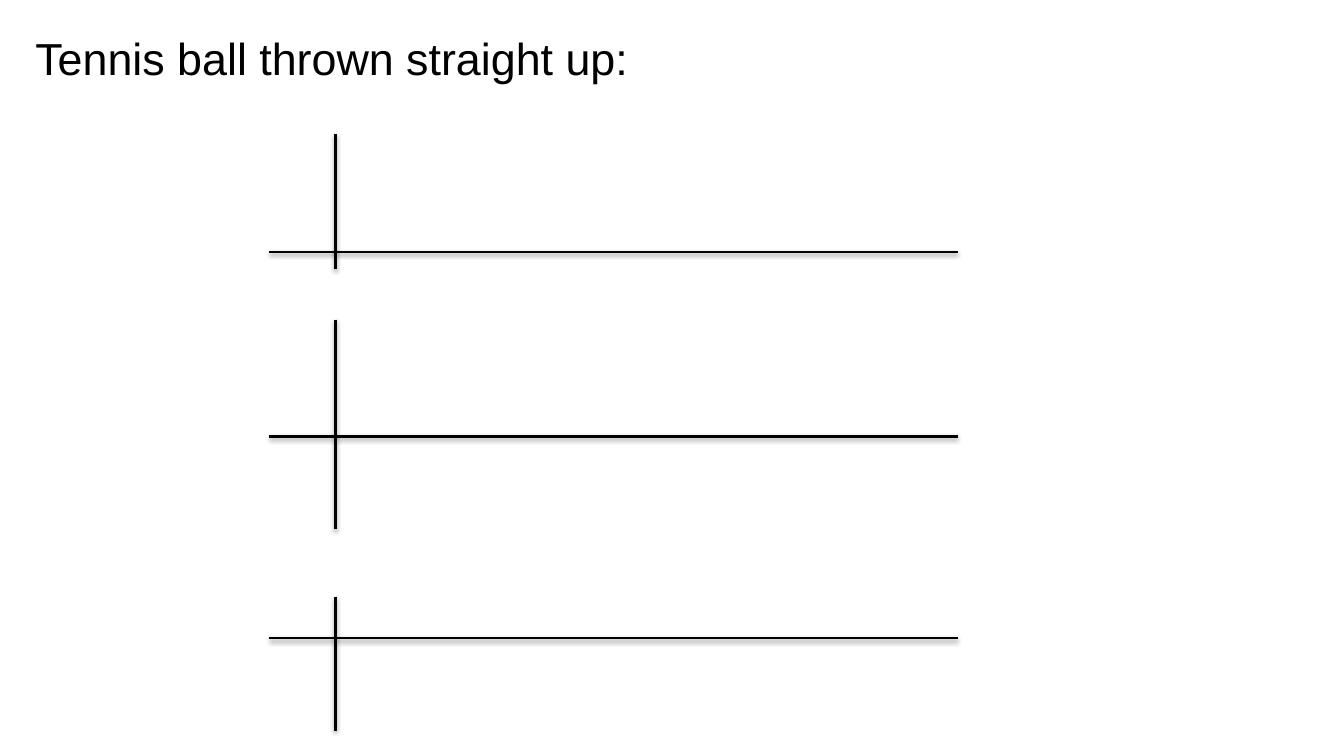
from dataclasses import dataclass

from lxml.etree import SubElement
from pptx import Presentation
from pptx.dml.color import RGBColor
from pptx.enum.shapes import MSO_CONNECTOR as Connector
from pptx.enum.text import MSO_ANCHOR as Anchor, MSO_AUTO_SIZE as AutoSize, PP_ALIGN as Align
from pptx.oxml.ns import qn
from pptx.util import Inches, Pt


@dataclass(frozen=True)
class Theme:
    ink: RGBColor = RGBColor(0, 0, 0)
    paper: RGBColor = RGBColor(255, 255, 255)
    font: str = "Arial"
    title_size: int = 32
    axis_width: int = 2
    shadow_alpha: int = 38  # percent
    shadow_blur: float = 3.15
    shadow_distance: float = 1.57


THEME = Theme()
TITLE_BOX = (0.25, 0.25, 10.67, 0.64)
GRAPH_LEFT, GRAPH_WIDTH = 2.67, 6.83
ORIGIN_OFFSET = 0.66  # from the graph's left edge to its vertical axis
# top, height and depth of the time axis below the top, for each graph
GRAPHS = [(1.33, 1.34, 1.17), (3.17, 2.08, 1.16), (5.92, 1.33, 0.41)]


def set_attributes(target, values):
    for name, value in values.items():
        setattr(target, name, value)


def add_shadow(axis):
    effects = SubElement(axis._element.spPr, qn("a:effectLst"))
    shadow = SubElement(effects, qn("a:outerShdw"), {
        "blurRad": str(Pt(THEME.shadow_blur)), "dist": str(Pt(THEME.shadow_distance)),
        "dir": str(90 * 60000), "rotWithShape": "0",
    })
    color = SubElement(shadow, qn("a:srgbClr"), val=str(THEME.ink))
    SubElement(color, qn("a:alpha"), val=str(THEME.shadow_alpha * 1000))


def add_axis(slide, *ends):
    axis = slide.shapes.add_connector(Connector.STRAIGHT, *map(Inches, ends))
    axis.line.color.rgb = THEME.ink
    axis.line.width = Pt(THEME.axis_width)
    add_shadow(axis)


def add_graph(slide, left, top, width, height, time_depth):
    """Draw one empty pair of axes inside the given box."""
    origin_x, time_y = left + ORIGIN_OFFSET, top + time_depth
    add_axis(slide, origin_x, top, origin_x, top + height)
    add_axis(slide, left + width, time_y, left, time_y)


def add_title(slide, box, wording):
    title = slide.shapes.title
    set_attributes(title, dict(zip(("left", "top", "width", "height"), map(Inches, box))))
    frame = title.text_frame
    frame.text = wording
    set_attributes(frame, {"word_wrap": True, "vertical_anchor": Anchor.TOP,
                           "auto_size": AutoSize.SHAPE_TO_FIT_TEXT})
    heading = frame.paragraphs[0]
    heading.alignment = Align.LEFT
    font = heading.runs[0].font
    set_attributes(font, {"name": THEME.font, "size": Pt(THEME.title_size)})
    font.color.rgb = THEME.ink


def build_motion_slide(deck):
    slide = deck.slides.add_slide(deck.slide_layouts.get_by_name("Title Only"))
    background = slide.background.fill
    background.solid()
    background.fore_color.rgb = THEME.paper

    # Title
    add_title(slide, TITLE_BOX, "Tennis ball thrown straight up:")

    # Three stacked graphs sharing one origin line
    for top, height, time_depth in GRAPHS:
        add_graph(slide, GRAPH_LEFT, top, GRAPH_WIDTH, height, time_depth)


def main():
    deck = Presentation()
    set_attributes(deck, {"slide_width": Inches(13.33), "slide_height": Inches(7.5)})
    build_motion_slide(deck)
    deck.save("out.pptx")


if __name__ == "__main__":
    main()
